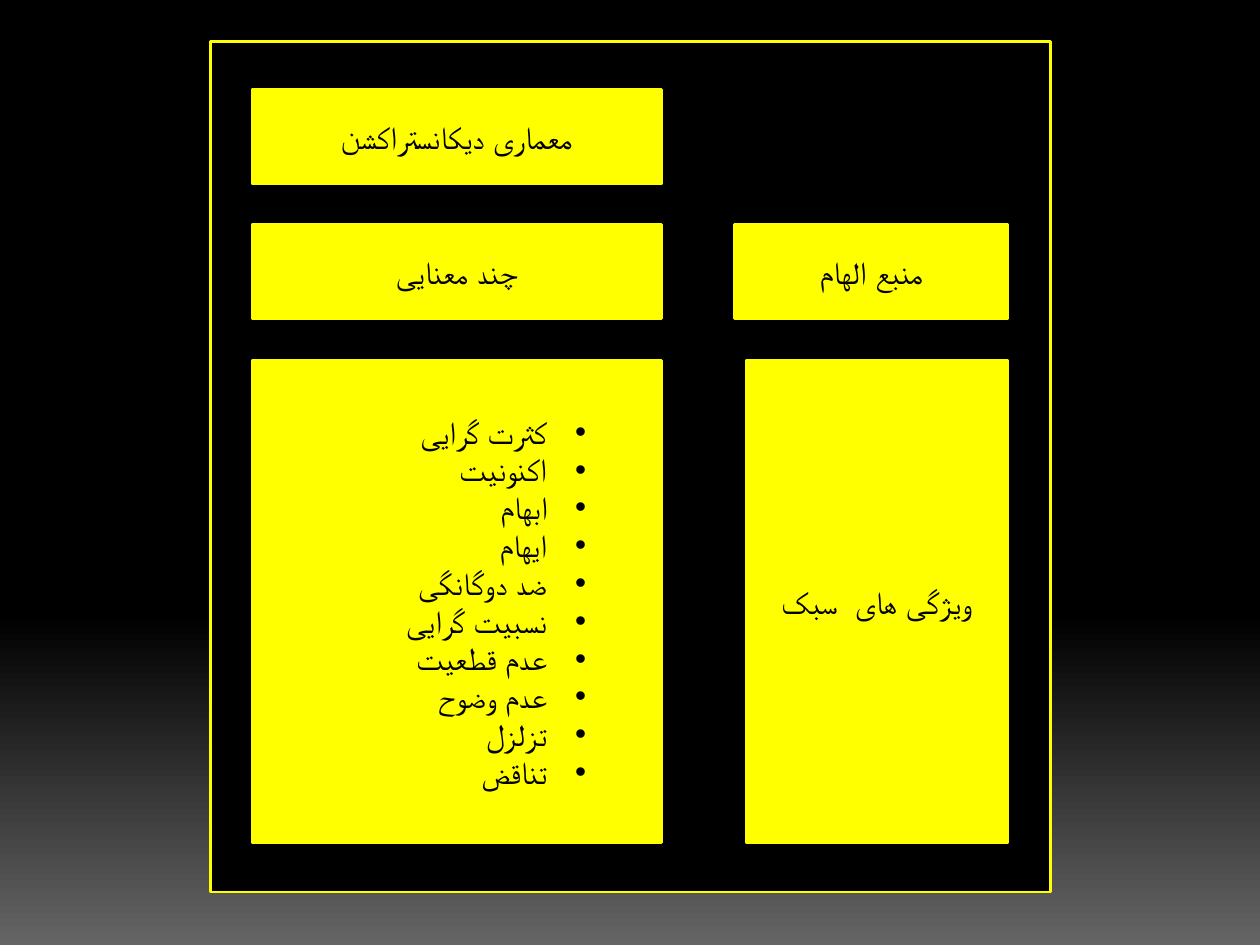
from copy import deepcopy
from dataclasses import dataclass

from pptx import Presentation
from pptx.dml.color import RGBColor
from pptx.enum.shapes import MSO_SHAPE as Preset
from pptx.enum.text import MSO_ANCHOR as Anchor, PP_ALIGN as Align
from pptx.oxml.ns import qn
from pptx.oxml.xmlchemy import OxmlElement
from pptx.slide import Slide
from pptx.util import Inches, Pt


@dataclass(frozen=True)
class Theme:
    black: RGBColor = RGBColor(0, 0, 0)
    yellow: RGBColor = RGBColor(255, 255, 0)
    gray: RGBColor = RGBColor(0x65, 0x65, 0x65)
    font: str = "Arial"
    text_size: Pt = Pt(18)
    border: Pt = Pt(1.5)


@dataclass(frozen=True)
class Panel:
    left: float
    top: float
    width: float
    height: float
    lines: tuple[str, ...] = ()
    bulleted: bool = False
    fill: RGBColor = Theme.yellow


THEME = Theme()
VALUE_LEFT, VALUE_WIDTH = 2, 3.25
LABEL_RIGHT = 8
HEADING_TOP, SOURCE_TOP, TRAITS_TOP = 0.71, 1.78, 2.86
ROW_HEIGHT, TRAITS_HEIGHT = 0.75, 3.83
SOURCE_LABEL_WIDTH, TRAITS_LABEL_WIDTH = 2.17, 2.08
TRAITS = (
    "کثرت گرایی",
    "اکنونیت",
    "ابهام",
    "ایهام",
    "ضد دوگانگی",
    "نسبیت گرایی",
    "عدم قطعیت",
    "عدم وضوح",
    "تزلزل",
    "تناقض",
)
PANELS = (
    Panel(1.67, 0.33, 6.67, 6.75, fill=THEME.black),
    Panel(VALUE_LEFT, HEADING_TOP, VALUE_WIDTH, ROW_HEIGHT, ("معماری دیکانستراکشن",)),
    Panel(VALUE_LEFT, SOURCE_TOP, VALUE_WIDTH, ROW_HEIGHT, ("چند معنایی",)),
    Panel(VALUE_LEFT, TRAITS_TOP, VALUE_WIDTH, TRAITS_HEIGHT, TRAITS, bulleted=True),
    Panel(LABEL_RIGHT - TRAITS_LABEL_WIDTH, TRAITS_TOP, TRAITS_LABEL_WIDTH,
          TRAITS_HEIGHT, ("ویژگی های  سبک",)),
    Panel(LABEL_RIGHT - SOURCE_LABEL_WIDTH, SOURCE_TOP, SOURCE_LABEL_WIDTH,
          ROW_HEIGHT, ("منبع الهام",)),
)


def paint_background(slide: Slide) -> None:
    fill = slide.background.fill
    fill.gradient()
    fill.gradient_angle = 270
    stop_list = next(slide._element.iter(qn("a:gsLst")))
    stop_list.append(deepcopy(stop_list[0]))
    stops = ((0, THEME.black), (0.65, THEME.black), (1, THEME.gray))
    for stop, (position, color) in zip(fill.gradient_stops, stops):
        stop.position = position
        stop.color.rgb = color


def add_bullet(paragraph) -> None:
    properties = paragraph._p.get_or_add_pPr()
    formats = {"marL": Inches(0.81), "indent": Inches(-0.31), "lvl": 1, "rtl": 1}
    for attribute, value in formats.items():
        properties.set(attribute, str(value))
    for tag, attribute, value in (("a:buFont", "typeface", THEME.font),
                                  ("a:buChar", "char", "•")):
        mark = OxmlElement(tag)
        mark.set(attribute, value)
        properties.append(mark)


def write_line(paragraph, wording: str, bulleted: bool) -> None:
    paragraph.alignment = Align.RIGHT if bulleted else Align.CENTER
    if bulleted:
        add_bullet(paragraph)
    run = paragraph.add_run()
    run.text = wording
    for attribute, value in {"size": THEME.text_size, "name": THEME.font}.items():
        setattr(run.font, attribute, value)
    run.font.color.rgb = THEME.black
    complex_script = OxmlElement("a:cs")
    complex_script.set("typeface", THEME.font)
    run._r.get_or_add_rPr().append(complex_script)


def draw_panel(slide: Slide, panel: Panel) -> None:
    bounds = map(Inches, (panel.left, panel.top, panel.width, panel.height))
    box = slide.shapes.add_shape(Preset.RECTANGLE, *bounds)
    box.shadow.inherit = False
    box.fill.solid()
    box.fill.fore_color.rgb = panel.fill
    box.line.color.rgb = THEME.yellow
    box.line.width = THEME.border
    frame = box.text_frame
    for attribute, value in {"word_wrap": True, "vertical_anchor": Anchor.MIDDLE}.items():
        setattr(frame, attribute, value)
    for index, wording in enumerate(panel.lines):
        paragraph = frame.add_paragraph() if index else frame.paragraphs[0]
        write_line(paragraph, wording, panel.bulleted)


def main() -> None:
    deck = Presentation()
    deck.slide_width, deck.slide_height = Inches(10), Inches(7.5)
    slide = deck.slides.add_slide(deck.slide_layouts[6])
    paint_background(slide)
    for panel in PANELS:
        draw_panel(slide, panel)
    deck.save("out.pptx")


if __name__ == "__main__":
    main()
